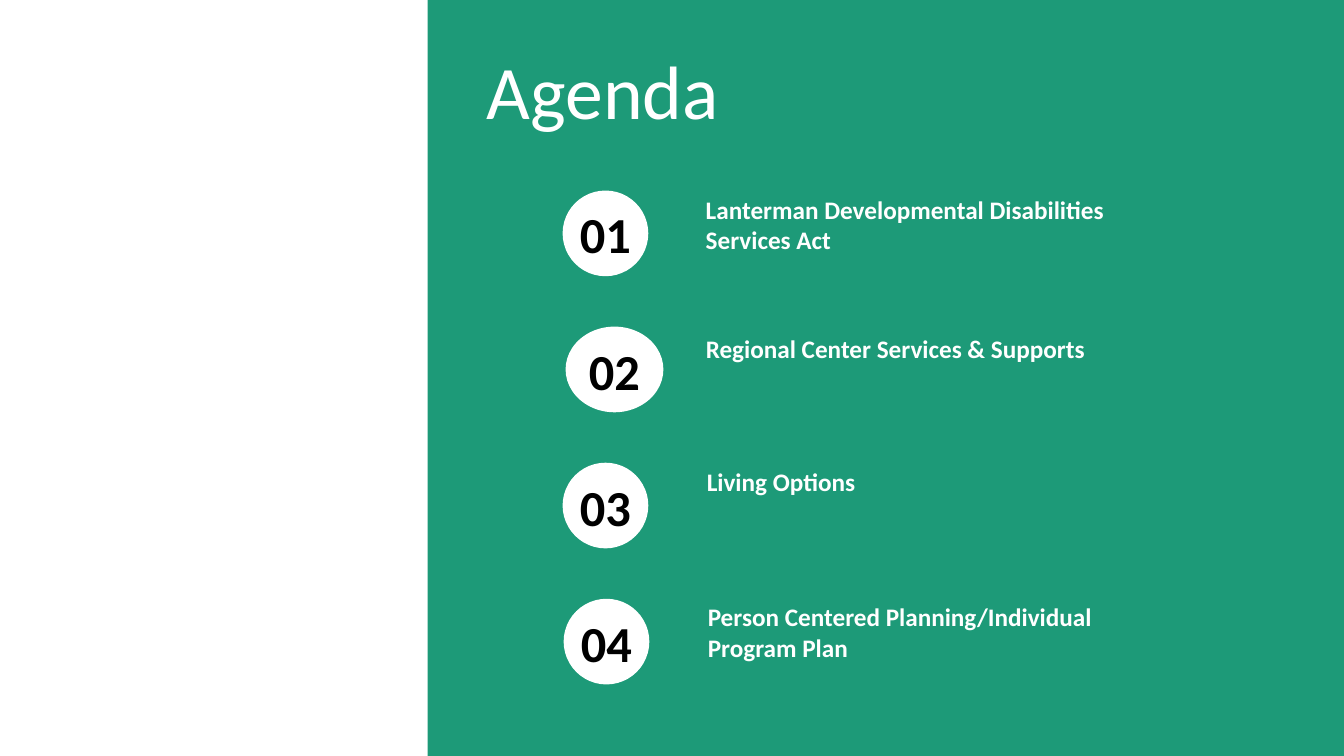
from pptx import Presentation
from pptx.dml.color import RGBColor
from pptx.enum.shapes import MSO_SHAPE
from pptx.enum.text import MSO_ANCHOR, PP_ALIGN
from pptx.util import Inches, Pt

RECT, OVAL = MSO_SHAPE.RECTANGLE, MSO_SHAPE.OVAL
TOP, MIDDLE = MSO_ANCHOR.TOP, MSO_ANCHOR.MIDDLE
LEFT, CENTER = PP_ALIGN.LEFT, PP_ALIGN.CENTER

GREEN = RGBColor(0x1D, 0x9A, 0x78)
WHITE = RGBColor(0xFF, 0xFF, 0xFF)
BLACK = RGBColor(0, 0, 0)

FIRST, PITCH, DISC = 1.89, 1.35, 0.85

# label, label left, label top, label width, label height, disc left, disc width
TOPICS = [
    ("Lanterman Developmental Disabilities Services Act",
     6.88, 1.88, 4.93, 0.71, 5.58, DISC),
    ("Regional Center Services & Supports",
     6.88, 3.26, 5.61, 0.4, 5.61, 0.97),
    ("Living Options",
     6.89, 4.58, 4.93, 0.4, 5.58, DISC),
    ("Person Centered Planning/Individual Program Plan",
     6.9, 5.92, 4.93, 0.71, 5.59, DISC),
]


def add_block(shapes, kind, box, color):
    block = shapes.add_shape(kind, *map(Inches, box))
    block.shadow.inherit = False
    block.fill.solid()
    block.fill.fore_color.rgb = color
    block.line.fill.background()


def add_text(shapes, text, box, size, color, bold=False, align=LEFT,
             anchor=TOP, inset=0.12):
    frame = shapes.add_textbox(*map(Inches, box)).text_frame
    layout = {
        "word_wrap": True,
        "vertical_anchor": anchor,
        "margin_left": Inches(inset),
        "margin_right": Inches(inset),
    }
    for name, value in layout.items():
        setattr(frame, name, value)
    para = frame.paragraphs[0]
    para.alignment = align
    run = para.add_run()
    run.text = text
    style = {"name": "Calibri", "size": Pt(size), "bold": bold}
    for name, value in style.items():
        setattr(run.font, name, value)
    run.font.color.rgb = color


def add_topic(slide, index, label, left, top, width, height, x, wide):
    """Group a topic's label with its numbered disc."""
    shapes = slide.shapes.add_group_shape().shapes
    y = FIRST + index * PITCH
    add_text(shapes, label, (left, top, width, height), 18, WHITE, bold=True)
    add_block(shapes, OVAL, (x, y, wide, DISC), WHITE)
    add_text(shapes, f"{index + 1:02}", (x - 0.1, y + 0.08, wide + 0.2, 0.71),
             36, BLACK, bold=True, align=CENTER)


def main():
    deck = Presentation()
    deck.slide_width, deck.slide_height = Inches(13.33), Inches(7.5)
    slide = deck.slides.add_slide(deck.slide_layouts[6])
    add_block(slide.shapes, RECT, (4.24, 0, 9.09, 7.5), GREEN)
    add_text(slide.shapes, "Agenda", (4.73, 0.38, 8.6, 1.01), 54, WHITE,
             anchor=MIDDLE, inset=0.1)
    for index, topic in enumerate(TOPICS):
        add_topic(slide, index, *topic)
    deck.save("out.pptx")


if __name__ == "__main__":
    main()
